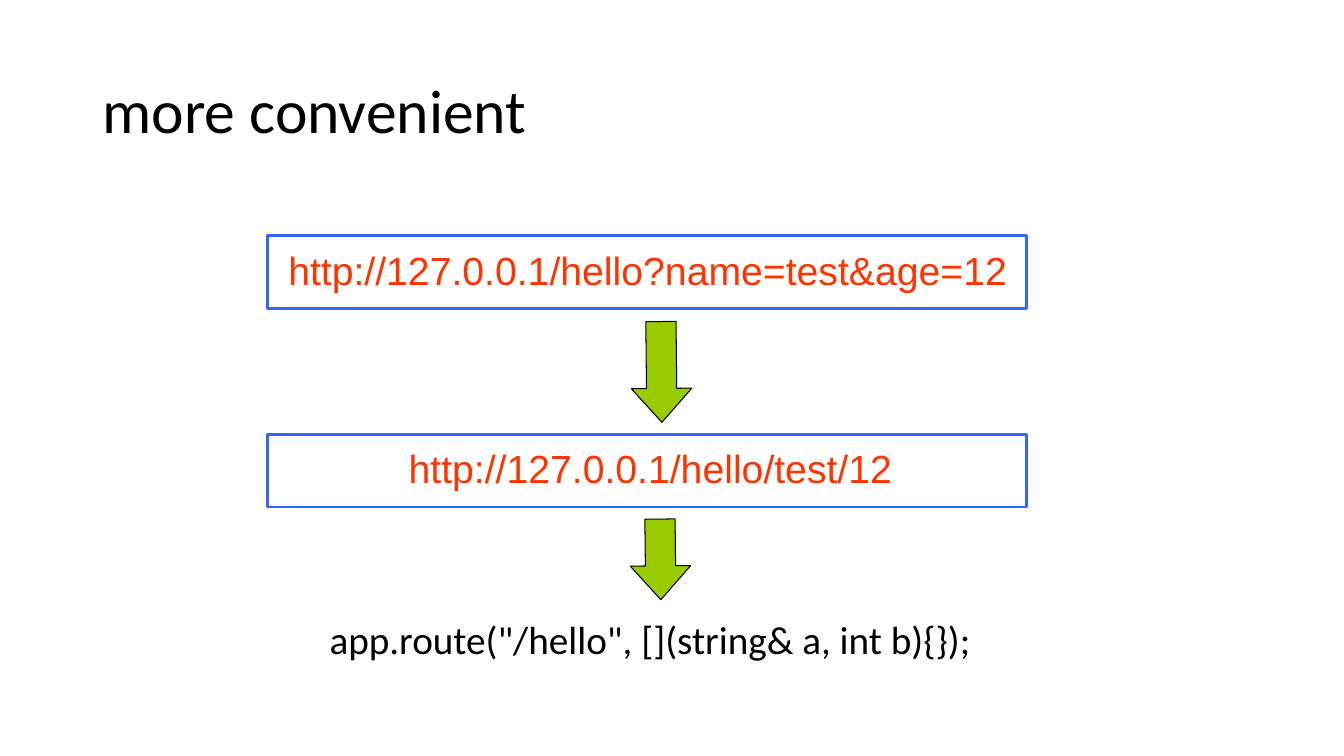
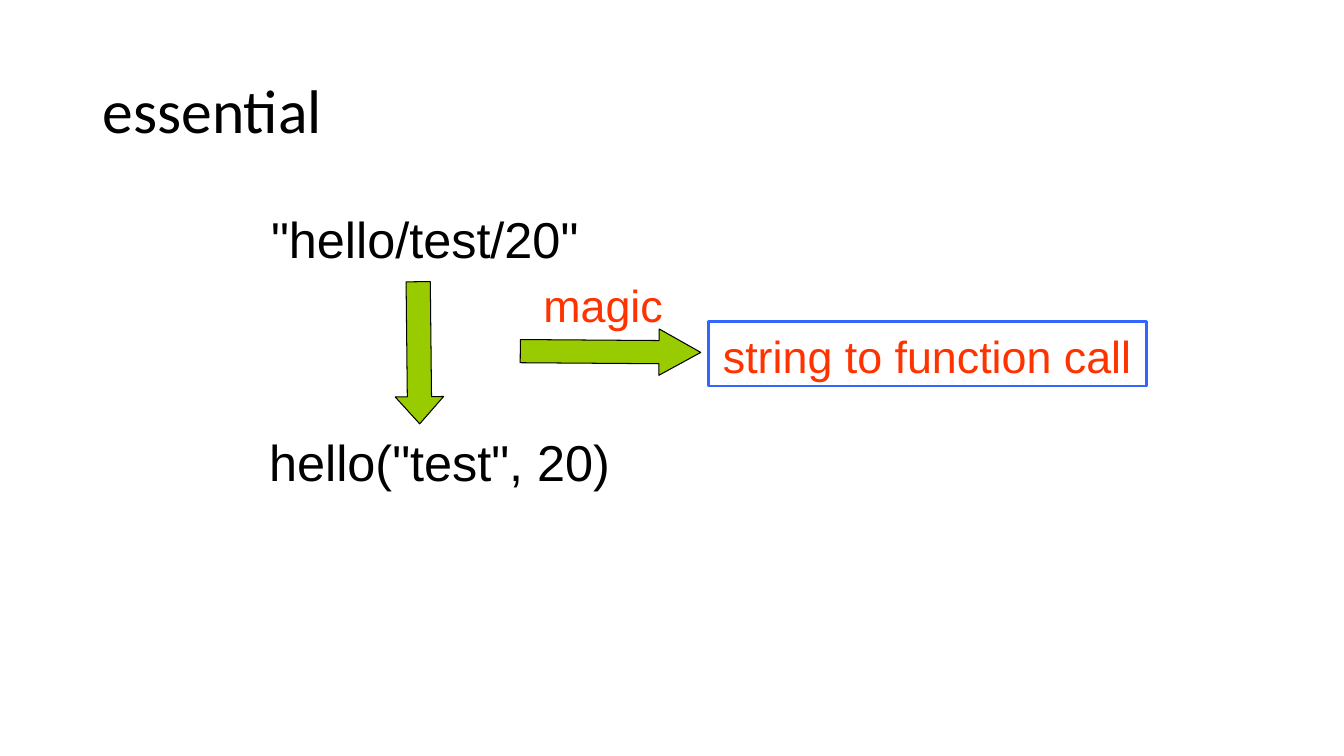
import pptx
import pptx.dml.color
import pptx.enum.shapes
import pptx.enum.text
import pptx.util

Inches = pptx.util.Inches
Pt = pptx.util.Pt
RGBColor = pptx.dml.color.RGBColor
Shape = pptx.enum.shapes.MSO_SHAPE
Align = pptx.enum.text.PP_ALIGN
Anchor = pptx.enum.text.MSO_ANCHOR

# Shared look
BLACK = RGBColor(0x00, 0x00, 0x00)
RED = RGBColor(0xFF, 0x33, 0x00)
BLUE = RGBColor(0x33, 0x66, 0xFF)
GREEN = RGBColor(0x99, 0xCC, 0x00)

HEAD_LENGTH = 0.56
DOWN = 89.4
MARGINS = (0.1, 0.05, 0.1, 0.05)
TITLE_AREA = (0.92, 0.4, 11.5, 1.45)
URL_MARGINS = (0.21, 0.1, 0.14, 0.05)
URL_LEFT, URL_TOP, URL_WIDTH, URL_HEIGHT, URL_PITCH = 2.65, 2.34, 7.53, 0.72, 1.97

# Content: text is (words, area, format), an arrow is (area, rotation, head length)
URLS = [
    ("http://127.0.0.1/hello?name=test&age=12", Align.LEFT),
    ("http://127.0.0.1/hello/test/12", Align.CENTER),
]
SLIDES = [
    {
        "title": "more convenient",
        "frames": [
            (words, (URL_LEFT, URL_TOP + row * URL_PITCH, URL_WIDTH, URL_HEIGHT),
             {"size": 28, "align": align, "margins": URL_MARGINS})
            for row, (words, align) in enumerate(URLS)
        ],
        "labels": [
            ('app.route("/hello", [](string& a, int b){});', (3.17, 6.06, 6.8, 0.57),
             {"size": 28, "font": "Calibri"}),
        ],
        "arrows": [
            ((6.06, 3.39, 1, 0.6), DOWN, HEAD_LENGTH),
            ((6.15, 5.25, 0.8, 0.6), DOWN, HEAD_LENGTH),
        ],
    },
    {
        "title": "essential",
        "frames": [
            ("string to function call", (7.03, 3.19, 4.34, 0.64),
             {"size": 32, "margins": (0.14, 0.07, 0.1, 0.05)}),
        ],
        "labels": [
            ('"hello/test/20"', (2.59, 2.02, 3.8, 0.7), {"size": 36}),
            ('hello("test", 20)', (2.57, 4.23, 3.8, 0.7), {"size": 36}),
            ("magic", (5.29, 2.71, 1.6, 0.63), {"size": 32, "color": RED}),
        ],
        "arrows": [
            ((3.45, 3.26, 1.41, 0.48), DOWN, HEAD_LENGTH),
            ((5.16, 3.26, 1.79, 0.46), 0.4, 0.9),
        ],
    },
]


def write_text(box, words, size, font="Arial", color=BLACK, align=Align.LEFT,
               anchor=Anchor.TOP, margins=MARGINS, spacing=1.0):
    frame = box.text_frame
    frame.word_wrap = True
    frame.vertical_anchor = anchor
    (frame.margin_left, frame.margin_top,
     frame.margin_right, frame.margin_bottom) = map(Inches, margins)
    para = frame.paragraphs[0]
    para.alignment = align
    para.line_spacing = spacing
    span = para.add_run()
    span.text = words
    span.font.name = font
    span.font.size = Pt(size)
    span.font.color.rgb = color


def add_label(page, words, area, **text_format):
    box = page.shapes.add_textbox(*map(Inches, area))
    write_text(box, words, **text_format)


def add_outlined(page, kind, area, line_color, line_width):
    shape = page.shapes.add_shape(kind, *map(Inches, area))
    shape.shadow.inherit = False
    shape.line.color.rgb = line_color
    shape.line.width = Pt(line_width)
    return shape


def add_frame(page, words, area, **text_format):
    box = add_outlined(page, Shape.RECTANGLE, area, BLUE, 2)
    box.fill.background()
    write_text(box, words, color=RED, **text_format)


def add_arrow(page, area, rotation, head_length):
    arrow = add_outlined(page, Shape.RIGHT_ARROW, area, BLACK, 0.75)
    arrow.fill.solid()
    arrow.fill.fore_color.rgb = GREEN
    arrow.adjustments[1] = head_length
    arrow.rotation = rotation


def main():
    deck = pptx.Presentation()
    deck.slide_width, deck.slide_height = Inches(13.33), Inches(7.5)
    for content in SLIDES:
        page = deck.slides.add_slide(deck.slide_layouts[6])
        # Title
        add_label(page, content["title"], TITLE_AREA, size=44, font="Calibri",
                  anchor=Anchor.MIDDLE, spacing=0.9)
        # Diagram
        for words, area, text_format in content["frames"]:
            add_frame(page, words, area, **text_format)
        for area, rotation, head_length in content["arrows"]:
            add_arrow(page, area, rotation, head_length)
        for words, area, text_format in content["labels"]:
            add_label(page, words, area, **text_format)
    deck.save("out.pptx")


if __name__ == "__main__":
    main()
